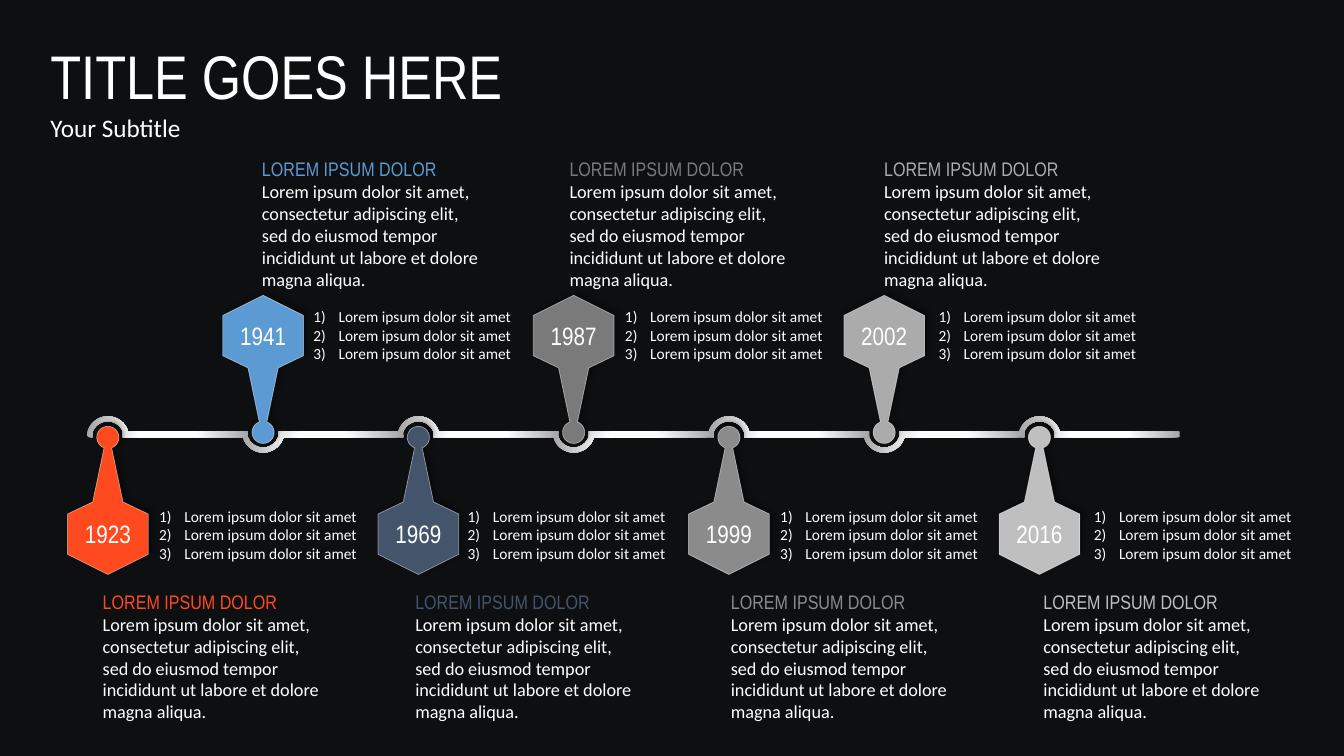
"""Build a dark timeline slide with seven year pins and their descriptions."""
import math
from dataclasses import dataclass

import lxml.etree
import pptx
import pptx.dml.color
import pptx.enum.text
import pptx.oxml
import pptx.oxml.ns
import pptx.util

Inches = pptx.util.Inches
qn = pptx.oxml.ns.qn

TITLE = "TITLE GOES HERE"
SUBTITLE = "Your Subtitle"
HEADING = "LOREM IPSUM DOLOR"
DESCRIPTION = ("Lorem ipsum dolor sit amet, consectetur adipiscing elit, sed do "
               "eiusmod tempor incididunt ut labore et dolore magna aliqua.")
POINTS = ["Lorem ipsum dolor sit amet"] * 3
# year, colour, left of points, left of description
MILESTONES = [
    ("1923", "FE4A1E", 1.48, 0.92),
    ("1941", "5C9AD3", 3.01, 2.50),
    ("1969", "44546B", 4.54, 4.02),
    ("1987", "7A7A7A", 6.10, 5.55),
    ("1999", "8B8B8B", 7.64, 7.15),
    ("2002", "ABABAB", 9.21, 8.67),
    ("2016", "BFBFBF", 10.75, 10.25),
]


@dataclass(frozen=True)
class Theme:
    """Colours, fonts and type sizes."""
    background: str = "0E0F11"
    text: str = "FFFFFF"
    track_end: str = "A5A5A5"
    shadow: str = "000000"
    display: str = "Arial Narrow"
    body: str = "Calibri"
    title: int = 44
    subtitle: int = 18
    year: int = 18
    heading: int = 14
    description: int = 13
    point: int = 11


@dataclass(frozen=True)
class Side:
    """Heights of the parts on one side of the track."""
    direction: int
    knob: float
    year: float
    points: float
    description: float


THEME = Theme()
BELOW = Side(1, 4.34, 5.09, 4.98, 5.80)
ABOVE = Side(-1, 4.29, 3.13, 3.00, 1.51)
FIRST_CENTER, STEP, AXIS = 1.07, 1.54, 4.31
RING_OUTER, RING_INNER, KNOB = 0.21, 0.16, 0.11
PIN_WIDTH, YEAR_HEIGHT = 0.8, 0.4
DRAWING = 'xmlns:a="http://schemas.openxmlformats.org/drawingml/2006/main"'


def rgb(color):
    """Return a colour object for a hex string."""
    return pptx.dml.color.RGBColor.from_string(color)


def arc(radius, start, end, steps=24):
    """Return points on an arc, with angles in degrees."""
    angles = [math.radians(start + (end - start) * i / steps) for i in range(steps + 1)]
    return [(radius * math.cos(a), radius * math.sin(a)) for a in angles]


def add_outline(shapes, center, middle, direction, offsets):
    """Draw a closed outline, mirrored vertically by direction."""
    corners = [(Inches(center + x), Inches(middle + direction * y)) for x, y in offsets]
    builder = shapes.build_freeform(*corners[0], scale=1.0)
    builder.add_line_segments(corners[1:], close=True)
    outline = builder.convert_to_shape()
    outline.shadow.inherit = False
    return outline


def add_run(paragraph, words, font, size, color):
    """Add one formatted run."""
    run = paragraph.add_run()
    run.text = words
    run.font.name = font
    run.font.size = pptx.util.Pt(size)
    run.font.color.rgb = rgb(color)


def add_frame(shapes, left, top, width, height):
    """Add a wrapping text box and return its frame."""
    frame = shapes.add_textbox(*map(Inches, (left, top, width, height))).text_frame
    frame.word_wrap = True
    return frame


def add_track(shapes, center, side):
    """Draw one half ring with the bar that leads to the next pin."""
    offsets = (arc(RING_OUTER, 185, 343) + [(1.39, -0.06), (1.39, 0), (0.15, 0)]
               + [(x, y) for x, y in arc(RING_INNER, 340, 200)] + [(-0.15, 0), (-0.18, 0)])
    middle = AXIS + side.direction * 0.03
    track = add_outline(shapes, center, middle, side.direction, offsets)
    stops = "".join(f'<a:gs pos="{at}"><a:srgbClr val="{color}"/></a:gs>' for at, color in
                    [(0, THEME.text), (35000, THEME.text), (100000, THEME.track_end)])
    gradient = pptx.oxml.parse_xml(
        f'<a:gradFill {DRAWING} rotWithShape="1"><a:gsLst>{stops}</a:gsLst>'
        '<a:path path="circle"><a:fillToRect l="50000" t="180000" r="50000" b="-80000"/>'
        '</a:path></a:gradFill>')
    track.element.spPr.find(qn("a:custGeom")).addnext(gradient)
    track.line.fill.background()


def add_pin(shapes, center, side, year, color):
    """Draw a pin with its year as one group."""
    pin = shapes.add_group_shape().shapes
    half = PIN_WIDTH / 2
    offsets = (arc(KNOB, 110, 430) + [(0.15, 0.64), (half, 0.76), (half, 1.16), (0, 1.36),
                                      (-half, 1.16), (-half, 0.76), (-0.15, 0.64)])
    body = add_outline(pin, center, side.knob, side.direction, offsets)
    body.fill.solid()
    body.fill.fore_color.rgb = rgb(color)
    body.line.color.rgb = rgb(THEME.text)
    body.line.width = pptx.util.Pt(0.5)
    line_color = body.element.spPr.find(qn("a:ln")).find(".//" + qn("a:srgbClr"))
    lxml.etree.SubElement(line_color, qn("a:alpha"), val="50000")
    body.element.spPr.find(qn("a:effectLst")).append(pptx.oxml.parse_xml(
        f'<a:outerShdw {DRAWING} blurRad="{pptx.util.Pt(4)}" dist="{pptx.util.Pt(3)}" '
        f'dir="{315 * 60000}" rotWithShape="0"><a:srgbClr val="{THEME.shadow}">'
        '<a:alpha val="40000"/></a:srgbClr></a:outerShdw>'))
    label = add_frame(pin, center - half, side.year, PIN_WIDTH, YEAR_HEIGHT).paragraphs[0]
    label.alignment = pptx.enum.text.PP_ALIGN.CENTER
    add_run(label, year, THEME.display, THEME.year, THEME.text)


def add_points(shapes, left, top):
    """Add the numbered points beside a pin."""
    frame = add_frame(shapes, left, top, 2.25, 0.66)
    for index, point in enumerate(POINTS):
        paragraph = frame.add_paragraph() if index else frame.paragraphs[0]
        properties = paragraph._p.get_or_add_pPr()
        properties.set("marL", str(Inches(0.25)))
        properties.set("indent", str(-Inches(0.25)))
        lxml.etree.SubElement(properties, qn("a:buAutoNum"), type="arabicParenR")
        add_run(paragraph, point, THEME.body, THEME.point, THEME.text)


def add_description(shapes, left, top, color):
    """Add a coloured heading and its description."""
    frame = add_frame(shapes, left, top, 2.41, 1.43)
    add_run(frame.paragraphs[0], HEADING, THEME.display, THEME.heading, color)
    add_run(frame.add_paragraph(), DESCRIPTION, THEME.body, THEME.description, THEME.text)


def add_title(title):
    """Place and format the title and subtitle."""
    title.left, title.top, title.width, title.height = map(Inches, (0.4, 0.33, 6.5, 1.14))
    frame = title.text_frame
    frame.word_wrap = True
    frame.auto_size = pptx.enum.text.MSO_AUTO_SIZE.NONE
    frame.vertical_anchor = pptx.enum.text.MSO_ANCHOR.TOP
    lines = [(TITLE, THEME.display, THEME.title), (SUBTITLE, THEME.body, THEME.subtitle)]
    for paragraph, line in zip((frame.paragraphs[0], frame.add_paragraph()), lines):
        paragraph.alignment = pptx.enum.text.PP_ALIGN.LEFT
        add_run(paragraph, *line, THEME.text)


def main():
    """Build and save the slide."""
    deck = pptx.Presentation()
    deck.slide_width, deck.slide_height = Inches(13.33), Inches(7.5)
    slide = deck.slides.add_slide(deck.slide_layouts[5])
    slide.background.fill.solid()
    slide.background.fill.fore_color.rgb = rgb(THEME.background)
    add_title(slide.shapes.title)
    stations = [(FIRST_CENTER + STEP * index, ABOVE if index % 2 else BELOW, milestone)
                for index, milestone in enumerate(MILESTONES)]
    for center, side, _ in reversed(stations):
        add_track(slide.shapes, center, side)
    for center, side, (year, color, points_left, description_left) in stations:
        add_pin(slide.shapes, center, side, year, color)
        add_points(slide.shapes, points_left, side.points)
        add_description(slide.shapes, description_left, side.description, color)


    deck.save("out.pptx")


if __name__ == "__main__":
    main()
